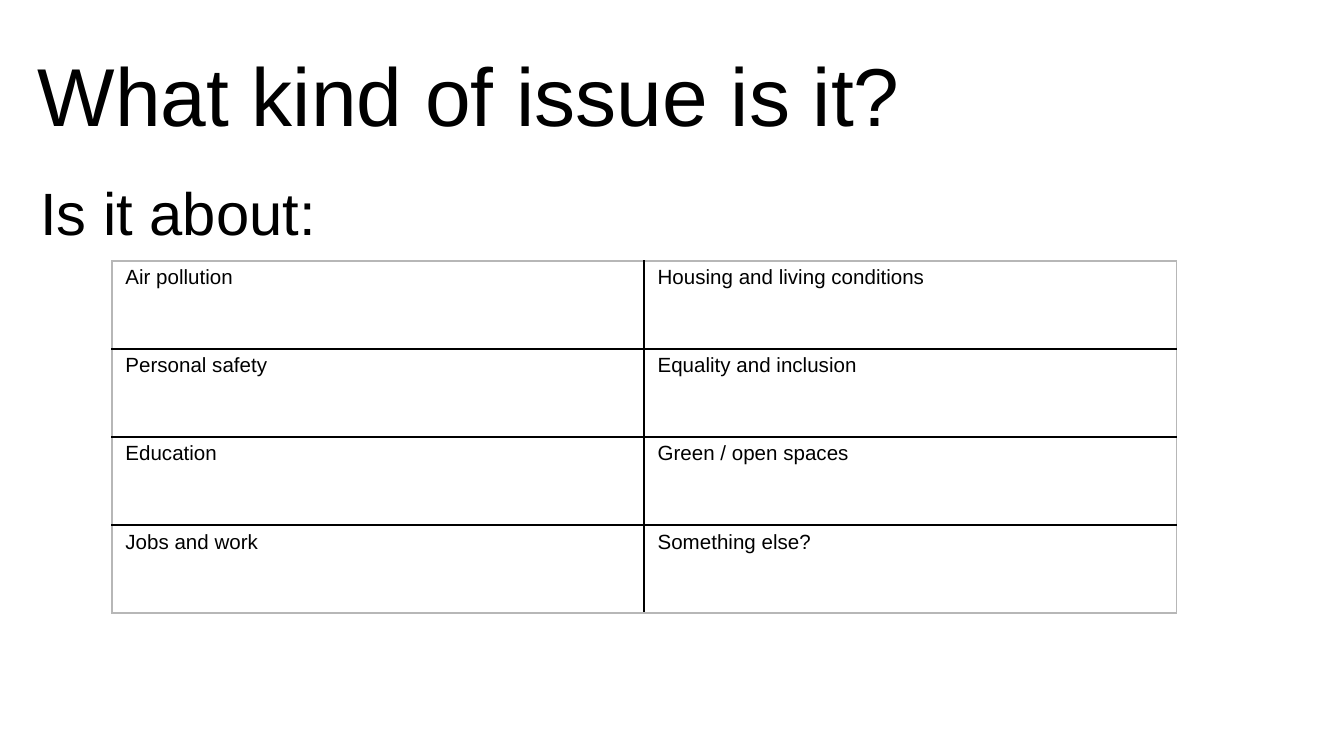
from dataclasses import dataclass

from lxml import etree
from pptx import Presentation
from pptx import util as u
from pptx.dml.color import RGBColor
from pptx.enum import text
from pptx.oxml.ns import qn


@dataclass(frozen=True)
class Theme:
    font: str = "Arial"
    ink: str = "000000"
    edge: str = "B7B7B7"
    title: float = 44
    lead: float = 32
    cell: float = 11
    rule: float = 1


@dataclass(frozen=True)
class Box:
    """Shares of the slide's size, in percent."""
    left: float
    top: float
    width: float
    height: float

    def place(self) -> tuple[int, ...]:
        sides = (WIDE, HIGH, WIDE, HIGH)
        shares = (self.left, self.top, self.width, self.height)
        return tuple(round(side * share / 100)
                     for side, share in zip(sides, shares))


@dataclass(frozen=True)
class Label:
    words: str
    box: Box
    size: float
    anchor: text.MSO_ANCHOR
    inset: float = 0
    before: float = 0


THEME = Theme()
WIDE = u.Inches(10)
HIGH = WIDE * 9 // 16
LABELS = (
    Label("What kind of issue is it?", Box(2.8, 4.1, 92.1, 16.7),
          THEME.title, text.MSO_ANCHOR.MIDDLE),
    Label("Is it about:", Box(2.8, 23.3, 92.1, 66),
          THEME.lead, text.MSO_ANCHOR.TOP, inset=0.02, before=6.4),
)
GRID = Box(8.33, 34.5, 79.2, 46.64)
ISSUES = (
    ("Air pollution", "Housing and living conditions"),
    ("Personal safety", "Equality and inclusion"),
    ("Education", "Green / open spaces"),
    ("Jobs and work", "Something else?"),
)


def style(para, size: float) -> None:
    para.font.name = THEME.font
    para.font.size = u.Pt(size)
    para.font.color.rgb = RGBColor.from_string(THEME.ink)


def draw_label(slide, label: Label) -> None:
    frame = slide.shapes.add_textbox(*label.box.place()).text_frame
    frame.word_wrap = True
    frame.vertical_anchor = label.anchor
    frame.margin_top = frame.margin_right = frame.margin_bottom = 0
    frame.margin_left = u.Inches(label.inset)
    para = frame.paragraphs[0]
    para.text = label.words
    para.space_before = u.Pt(label.before)
    style(para, label.size)


def rule_cell(cell, outer: dict[str, bool]) -> None:
    props = cell._tc.get_or_add_tcPr()
    for spot, (side, edge) in enumerate(outer.items()):
        line = etree.Element(qn(f"a:{side}"), w=str(u.Pt(THEME.rule)))
        fill = etree.SubElement(line, qn("a:solidFill"))
        etree.SubElement(fill, qn("a:srgbClr"),
                         val=THEME.edge if edge else THEME.ink)
        props.insert(spot, line)


def draw_table(slide, box: Box, rows: tuple[tuple[str, ...], ...]) -> None:
    count, span = len(rows), len(rows[0])
    table = slide.shapes.add_table(count, span, *box.place()).table
    table.first_row = table.horz_banding = False
    for r, row in enumerate(rows):
        for c, words in enumerate(row):
            cell = table.cell(r, c)
            cell.fill.background()
            cell.margin_left = cell.margin_right = u.Inches(0.1)
            cell.margin_top = cell.margin_bottom = u.Inches(0.04)
            cell.text = words
            style(cell.text_frame.paragraphs[0], THEME.cell)
            rule_cell(cell, {"lnL": c == 0, "lnR": c == span - 1,
                             "lnT": r == 0, "lnB": r == count - 1})


def main() -> None:
    deck = Presentation()
    deck.slide_width, deck.slide_height = WIDE, HIGH
    slide = deck.slides.add_slide(deck.slide_layouts[6])
    for label in LABELS:
        draw_label(slide, label)
    draw_table(slide, GRID, ISSUES)
    deck.save("out.pptx")


if __name__ == "__main__":
    main()
